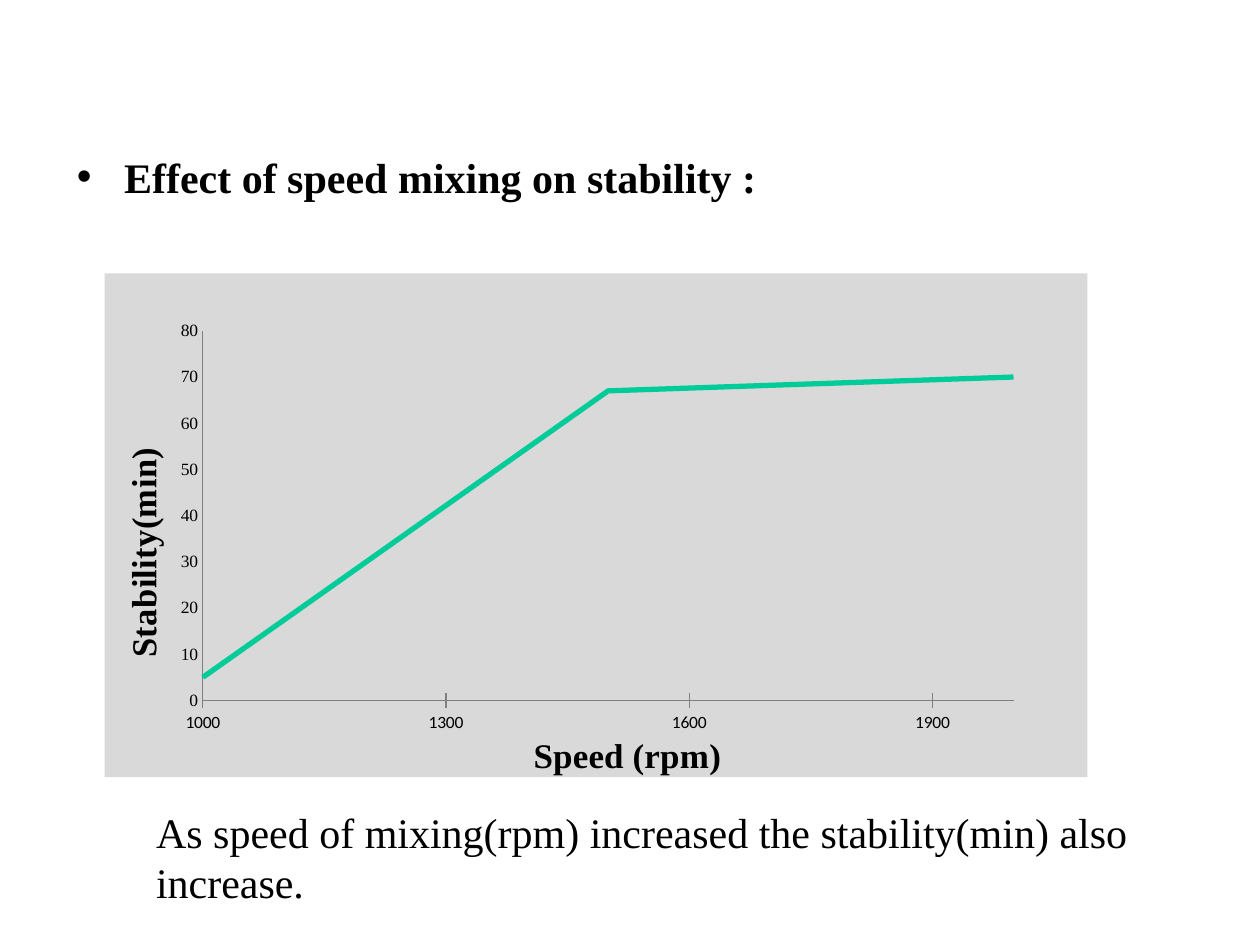
from lxml.etree import SubElement, fromstring
from pptx import Presentation
from pptx.chart.data import XyChartData
from pptx.dml.color import RGBColor
from pptx.enum.chart import XL_CHART_TYPE as Kind, XL_TICK_MARK as Tick
from pptx.enum.text import MSO_AUTO_SIZE as Fit
from pptx.oxml.ns import qn
from pptx.util import Inches, Pt

WIDE, HIGH = 10, 7.5
SERIF = "Times New Roman"
BLACK, GREY, AXIS, GREEN = "000000", "D9D9D9", "808080", "00CC99"
NS = "http://schemas.openxmlformats.org/drawingml/2006/"
SPEEDS = (1000, 1500, 2000)
TIMES = (5, 67, 70)


def color(code):
    return RGBColor.from_string(code)


def box(left, top, width, height):
    """Turn shares of the slide's size into lengths."""
    return [Inches(round(share * side, 2)) for share, side in
            zip((left, top, width, height), (WIDE, HIGH) * 2)]


def style(font, size=24, bold=False, face=SERIF, code=BLACK):
    font.size, font.bold, font.name = Pt(size), bold, face
    font.color.rgb = color(code)


def write(frame, text, **form):
    frame.text = text
    para = frame.paragraphs[0]
    para.space_before = Pt(0)
    style(para.runs[0].font, **form)


def place(part, spot, inner=False, **shares):
    """Give a chart part a fixed place, as shares of the chart."""
    for old in part.findall(qn("c:layout")):
        part.remove(old)
    layout = part.makeelement(qn("c:layout"))
    part.insert(spot, layout)
    manual = SubElement(layout, qn("c:manualLayout"))
    if inner:
        SubElement(manual, qn("c:layoutTarget")).set("val", "inner")
    for key in ("x", "y"):
        SubElement(manual, qn(f"c:{key}Mode")).set("val", "edge")
    for key, share in shares.items():
        SubElement(manual, qn(f"c:{key}")).set("val", str(share))


def back(code):
    """Make a plain fill without an outline for a chart area."""
    return fromstring(
        f'<c:spPr xmlns:c="{NS}chart" xmlns:a="{NS}main"><a:solidFill>'
        f'<a:srgbClr val="{code}"/></a:solidFill>'
        '<a:ln><a:noFill/></a:ln></c:spPr>')


def name(title, text, x, y):
    write(title.text_frame, text, size=20, bold=True)
    place(title._element, 1, x=x, y=y)


def set_axis(axis, low, high, step, tick, face):
    axis.minimum_scale, axis.maximum_scale = low, high
    axis.major_unit = step
    axis.major_tick_mark, axis.minor_tick_mark = tick, Tick.NONE
    axis.has_major_gridlines = False
    axis.format.line.color.rgb = color(AXIS)
    style(axis.tick_labels.font, size=10, face=face)


def add_curve(slide):
    data = XyChartData()
    points = data.add_series("Series 1")
    for speed, time in zip(SPEEDS, TIMES):
        points.add_data_point(speed, time)
    chart = slide.shapes.add_chart(
        Kind.XY_SCATTER_SMOOTH_NO_MARKERS,
        *box(0.083, 0.29, 0.78, 0.543), data).chart
    style(chart.font, size=10)
    chart.has_legend = False

    # Titles and axes
    chart.has_title = chart.value_axis.has_title = True
    name(chart.chart_title, "Speed (rpm)", 0.43, 0.9)
    name(chart.value_axis.axis_title, "Stability(min)", 0.01, 0.34)
    set_axis(chart.category_axis, 1000, 2000, 300, Tick.CROSS, "Calibri")
    set_axis(chart.value_axis, 0, 80, 10, Tick.NONE, SERIF)

    # Line
    curve = chart.plots[0].series[0]
    curve.smooth = True
    curve.format.line.color.rgb = color(GREEN)
    curve.format.line.width = Pt(3)

    # Grey areas
    body = chart._chartSpace.find(qn("c:chart"))
    body.addnext(back(GREY))
    plot = body.find(qn("c:plotArea"))
    plot.append(back(GREY))
    place(plot, 0, inner=True, x=0.1, y=0.114, w=0.825, h=0.734)


def add_head(slide):
    title, body = slide.placeholders
    title.element.getparent().remove(title.element)
    body.left, body.top, body.width, body.height = box(
        0.051, 0.153, 0.874, 0.736)
    write(body.text_frame, "Effect of speed mixing on stability :", bold=True)


def add_note(slide):
    frame = slide.shapes.add_textbox(
        *box(0.114, 0.847, 0.811, 0.121)).text_frame
    frame.word_wrap, frame.auto_size = True, Fit.SHAPE_TO_FIT_TEXT
    write(frame, "As speed of mixing(rpm) increased the stability(min) "
                 "also increase.")


def main():
    deck = Presentation()
    deck.slide_width, deck.slide_height = Inches(WIDE), Inches(HIGH)
    slide = deck.slides.add_slide(deck.slide_layouts[1])
    add_head(slide)
    add_curve(slide)
    add_note(slide)
    deck.save("out.pptx")


if __name__ == "__main__":
    main()
